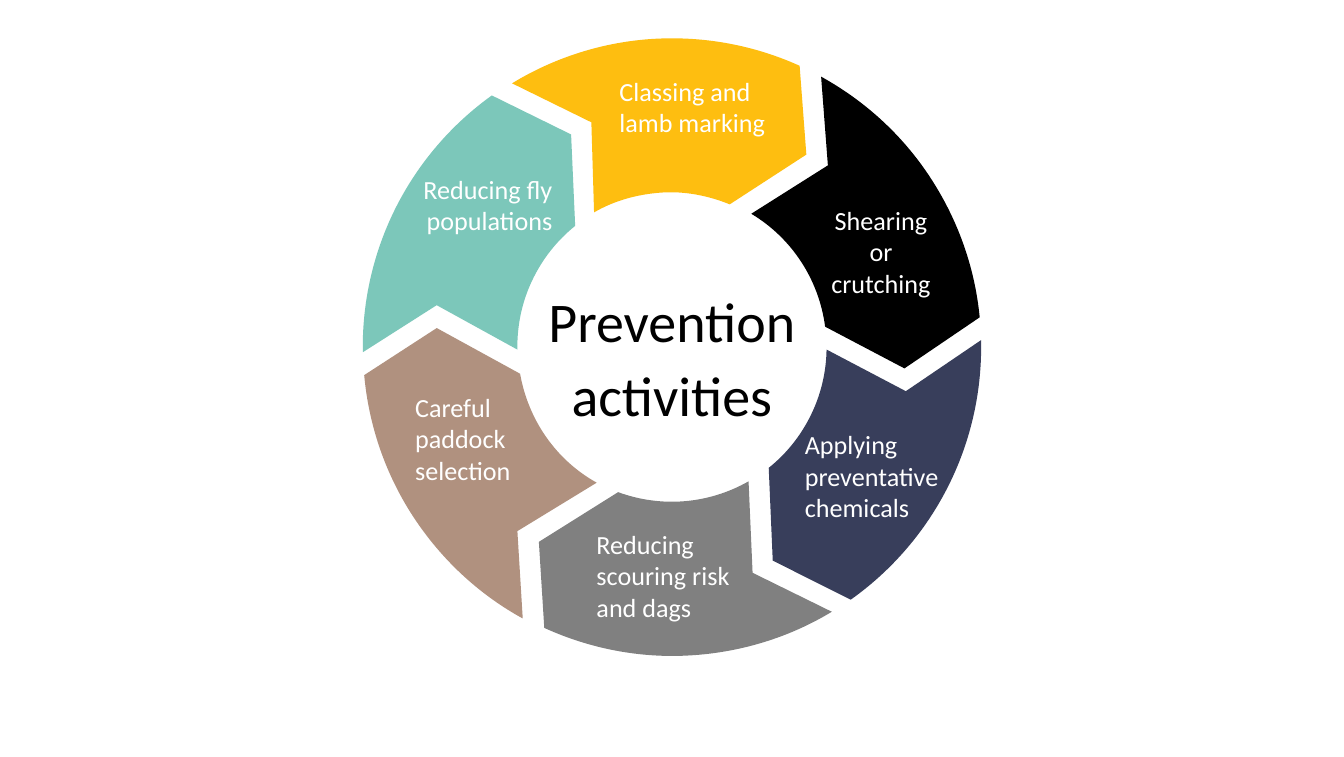
from dataclasses import dataclass
from math import atan2, cos, hypot, pi, radians, sin, tan

from lxml.etree import SubElement
from pptx import Presentation
from pptx.dml.color import RGBColor
from pptx.enum.text import MSO_ANCHOR, MSO_AUTO_SIZE, PP_ALIGN
from pptx.oxml.ns import qn
from pptx.oxml.xmlchemy import OxmlElement
from pptx.util import Inches, Pt

Point = tuple[float, float]
Command = tuple[str, list[Point]]

FONT = "Calibri"
CENTER: Point = (5.0, 2.58)
TILT = 33
COLORS = {
    "yellow": "FEBE10",
    "teal": "7CC7BA",
    "black": "000000",
    "brown": "B0917F",
    "navy": "383E5B",
    "gray": "808080",
    "white": "FFFFFF",
}


@dataclass
class Segment:
    color: str
    outer_start: Point
    outer_end: Point
    front: Point
    inner_start: Point
    inner_end: Point
    back: Point
    inner_curves: int = 2


@dataclass
class Label:
    lines: list[str]
    left: float
    top: float
    width: float
    height: float
    align: PP_ALIGN = PP_ALIGN.LEFT


SEGMENTS = [
    Segment("yellow", (3.81, 0.62), (5.95, 0.49), (6.0, 1.15),
            (5.43, 1.52), (4.42, 1.58), (4.4, 0.91)),
    Segment("teal", (2.7, 2.62), (3.66, 0.71), (4.25, 1.0),
            (4.28, 1.68), (3.85, 2.6), (3.25, 2.27)),
    Segment("black", (6.11, 0.57), (7.29, 2.36), (6.73, 2.74),
            (6.14, 2.43), (5.59, 1.59), (6.16, 1.23), 1),
    Segment("brown", (3.89, 4.6), (2.71, 2.79), (3.25, 2.44),
            (3.87, 2.78), (4.44, 3.59), (3.85, 3.95), 1),
    Segment("navy", (7.3, 2.53), (6.33, 4.46), (5.75, 4.17),
            (5.72, 3.48), (6.15, 2.6), (6.74, 2.91)),
    Segment("gray", (6.19, 4.55), (4.05, 4.67), (4.01, 4.03),
            (4.6, 3.66), (5.57, 3.58), (5.6, 4.26)),
]

LABELS = [
    Label(["Classing and lamb marking"], 4.51, 0.51, 1.42, 0.57),
    Label(["Shearing", "or crutching"], 6.01, 1.47, 1.09, 0.81, PP_ALIGN.CENTER),
    Label(["Applying preventative chemicals"], 5.89, 3.14, 1.26, 0.81),
    Label(["Reducing scouring risk", "and dags"], 4.34, 3.88, 1.26, 0.81),
    Label(["Careful paddock selection"], 2.99, 2.86, 1.26, 0.81),
    Label(["Reducing fly populations"], 2.95, 1.24, 1.26, 0.57, PP_ALIGN.RIGHT),
]


def rotate(point: Point, degrees: float) -> Point:
    x, y = point[0] - CENTER[0], point[1] - CENTER[1]
    turn = radians(degrees)
    return (CENTER[0] + x * cos(turn) - y * sin(turn),
            CENTER[1] + x * sin(turn) + y * cos(turn))


def arc(start: Point, end: Point, curves: int) -> list[Command]:
    (x1, y1), (x2, y2) = [(x - CENTER[0], y - CENTER[1]) for x, y in (start, end)]
    angle, radius = atan2(y1, x1), hypot(x1, y1)
    step = ((atan2(y2, x2) - angle + pi) % (2 * pi) - pi) / curves
    growth = (hypot(x2, y2) - radius) / curves
    pull = 4 / 3 * tan(step / 4)

    def place(index: int, lean: float) -> Point:
        turn, distance = angle + step * index, radius + growth * index
        return (CENTER[0] + distance * (cos(turn) - lean * sin(turn)),
                CENTER[1] + distance * (sin(turn) + lean * cos(turn)))

    return [("cubicBezTo", [place(i, pull), place(i + 1, -pull), place(i + 1, 0)])
            for i in range(curves)]


def outline(segment: Segment) -> list[Command]:
    commands = [
        ("moveTo", [segment.outer_start]),
        *arc(segment.outer_start, segment.outer_end, 2),
        ("lnTo", [segment.front]),
        ("lnTo", [segment.inner_start]),
        *arc(segment.inner_start, segment.inner_end, segment.inner_curves),
        ("lnTo", [segment.back]),
    ]
    return [(name, [rotate(point, TILT) for point in points]) for name, points in commands]


def sample(commands: list[Command]) -> list[Point]:
    samples = []
    for name, points in commands:
        if name == "cubicBezTo":
            for t in (i / 20 for i in range(20)):
                weights = ((1 - t) ** 3, 3 * t * (1 - t) ** 2, 3 * t * t * (1 - t), t ** 3)
                curve = [samples_start, *points]
                samples.append(tuple(sum(w * p[axis] for w, p in zip(weights, curve))
                                     for axis in (0, 1)))
        samples_start = points[-1]
        samples.append(samples_start)
    return samples


def draw_segment(slide, segment: Segment):
    commands = outline(segment)
    xs, ys = zip(*sample(commands))
    left, top = min(xs), min(ys)
    width, height = max(xs) - left, max(ys) - top
    builder = slide.shapes.build_freeform(Inches(left), Inches(top))
    builder.add_line_segments([(Inches(left + width), Inches(top + height))], close=True)
    shape = builder.convert_to_shape()
    path = shape.element.xpath(".//a:path")[0]
    for child in list(path):
        path.remove(child)
    for name, points in commands:
        command = SubElement(path, qn(f"a:{name}"))
        for x, y in points:
            SubElement(command, qn("a:pt"), x=str(Inches(x - left)), y=str(Inches(y - top)))
    SubElement(path, qn("a:close"))
    middle = rotate((left + width / 2, top + height / 2), -TILT)
    shape.left, shape.top = Inches(middle[0] - width / 2), Inches(middle[1] - height / 2)
    shape.rotation = 360 - TILT
    shape.shadow.inherit = False
    shape.fill.solid()
    shape.fill.fore_color.rgb = RGBColor.from_string(COLORS[segment.color])
    shape.line.fill.background()
    return shape


def write_lines(paragraph, lines: list[str], size: int, color: str) -> None:
    for index, line in enumerate(lines):
        if index:
            paragraph.add_line_break()
        run = paragraph.add_run()
        run.text = line
        run.font.name = FONT
        run.font.size = Pt(size)
        run.font.color.rgb = RGBColor.from_string(COLORS[color])


def draw_label(slide, label: Label) -> None:
    box = slide.shapes.add_textbox(
        Inches(label.left), Inches(label.top), Inches(label.width), Inches(label.height))
    frame = box.text_frame
    frame.word_wrap = True
    frame.auto_size = MSO_AUTO_SIZE.SHAPE_TO_FIT_TEXT
    paragraph = frame.paragraphs[0]
    paragraph.alignment = label.align
    write_lines(paragraph, label.lines, 14, "white")


def fill_center(slide) -> None:
    body = slide.placeholders[1]
    body.left, body.top = Inches(0), Inches(2.03)
    body.width, body.height = Inches(10), Inches(1.31)
    frame = body.text_frame
    frame.auto_size = MSO_AUTO_SIZE.NONE
    frame.vertical_anchor = MSO_ANCHOR.TOP
    paragraph = frame.paragraphs[0]
    properties = paragraph._p.get_or_add_pPr()
    properties.set("marL", "0")
    properties.set("indent", "0")
    properties.append(OxmlElement("a:buNone"))
    paragraph.alignment = PP_ALIGN.CENTER
    paragraph.line_spacing = 1.1
    paragraph.space_before = Pt(0)
    write_lines(paragraph, ["Prevention", "activities"], 30, "black")
    body.element.getparent().append(body.element)


def main() -> None:
    presentation = Presentation()
    presentation.slide_width, presentation.slide_height = Inches(10), Inches(5.63)
    slide = presentation.slides.add_slide(presentation.slide_layouts[1])
    title = slide.shapes.title
    title.element.getparent().remove(title.element)
    slide.shapes.add_group_shape([draw_segment(slide, segment) for segment in SEGMENTS])
    for label in LABELS:
        draw_label(slide, label)
    fill_center(slide)
    presentation.save("out.pptx")


if __name__ == "__main__":
    main()
